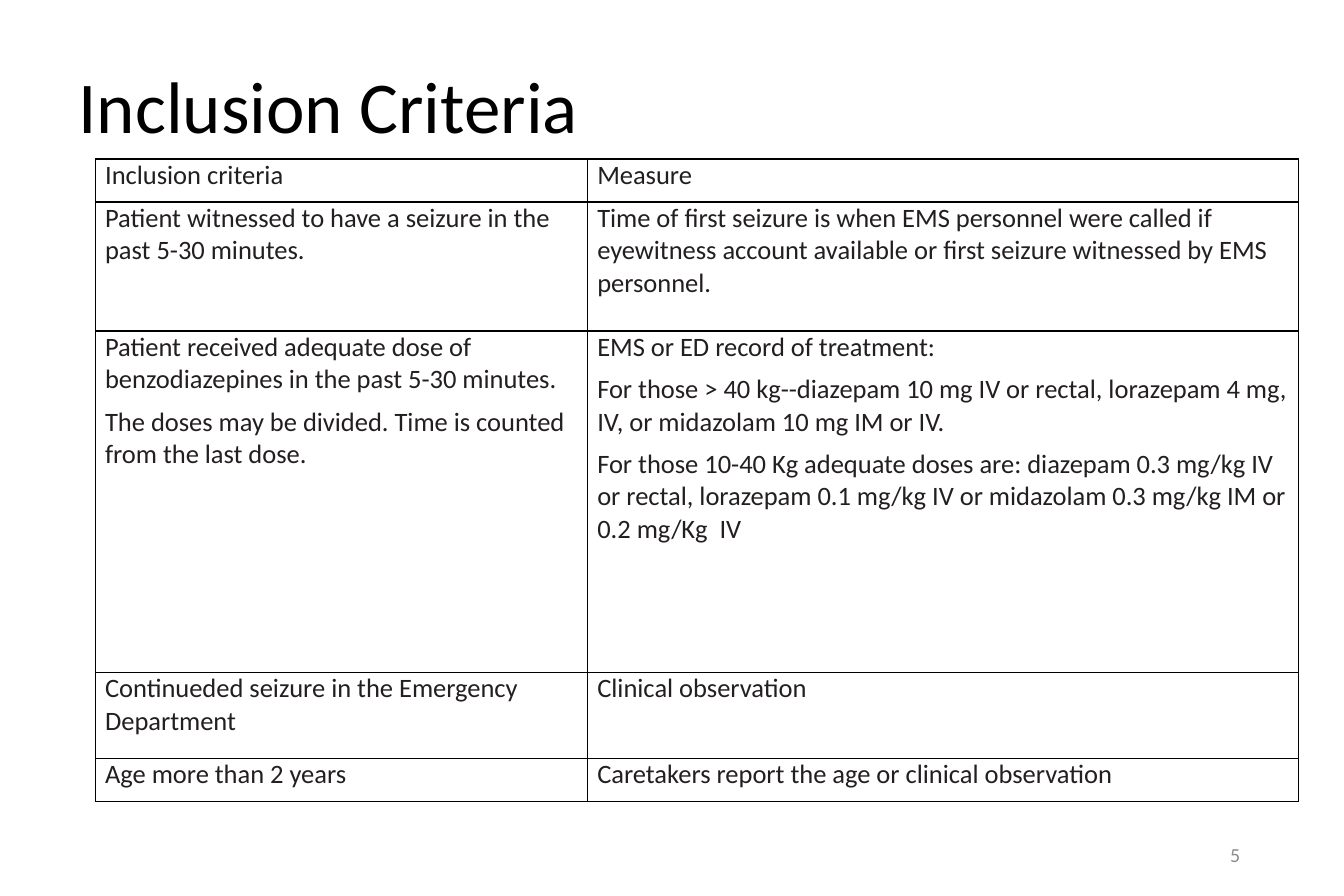
import pptx
import pptx.util
import pptx.dml.color
import pptx.enum.text
import pptx.oxml
import pptx.oxml.ns

Inches = pptx.util.Inches
Pt = pptx.util.Pt
ANCHOR = pptx.enum.text.MSO_ANCHOR
ALIGN = pptx.enum.text.PP_ALIGN

COLORS = {"title": "000000", "body": "231F20", "page": "8C8C8C", "line": "000000"}
COLS = [4.12, 5.95]
ROWS = [
    (0.36, ["Inclusion criteria"], ["Measure"]),
    (1.08,
     ["Patient witnessed to have a seizure in the past 5-30 minutes."],
     ["Time of first seizure is when EMS personnel were called if eyewitness "
      "account available or first seizure witnessed by EMS personnel."]),
    (2.86,
     ["Patient received adequate dose of benzodiazepines in the past 5-30 minutes.",
      "The doses may be divided. Time is counted from the last dose."],
     ["EMS or ED record of treatment:",
      "For those > 40 kg--diazepam 10 mg IV or rectal, lorazepam 4 mg, IV, "
      "or midazolam 10 mg IM or IV.",
      "For those 10-40 Kg adequate doses are: diazepam 0.3 mg/kg IV or rectal, "
      "lorazepam 0.1 mg/kg IV or midazolam 0.3 mg/kg IM or 0.2 mg/Kg  IV"]),
    (0.72, ["Continueded seizure in the Emergency Department"], ["Clinical observation"]),
    (0.36, ["Age more than 2 years"], ["Caretakers report the age or clinical observation"]),
]


def add_run(para, text, size, color):
    run = para.add_run()
    run.text = text
    run.font.name = "Calibri"
    run.font.size = Pt(size)
    run.font.color.rgb = pptx.dml.color.RGBColor.from_string(COLORS[color])


def add_label(slide, box, text, size, color, align):
    frame = slide.shapes.add_textbox(*map(Inches, box)).text_frame
    frame.word_wrap = True
    frame.vertical_anchor = ANCHOR.MIDDLE
    para = frame.paragraphs[0]
    para.alignment = align
    add_run(para, text, size, color)


def add_edges(cell):
    props = cell._tc.get_or_add_tcPr()
    for index, side in enumerate(["lnL", "lnR", "lnT", "lnB"]):
        props.insert(index, pptx.oxml.parse_xml(
            f'<a:{side} {pptx.oxml.ns.nsdecls("a")} w="{Pt(1)}"><a:solidFill>'
            f'<a:srgbClr val="{COLORS["line"]}"/></a:solidFill></a:{side}>'))


def fill_cell(cell, texts):
    cell.margin_left = cell.margin_right = Inches(0.08)
    cell.margin_top = cell.margin_bottom = 0
    cell.fill.background()
    add_edges(cell)
    frame = cell.text_frame
    for index, text in enumerate(texts):
        para = frame.add_paragraph() if index else frame.paragraphs[0]
        para.space_after = Pt(6)
        add_run(para, text, 16, "body")


def add_grid(slide, left, top):
    high = sum(row[0] for row in ROWS)
    box = map(Inches, (left, top, sum(COLS), high))
    table = slide.shapes.add_table(len(ROWS), len(COLS), *box).table
    table.first_row = table.horz_banding = False
    for col, width in zip(table.columns, COLS):
        col.width = Inches(width)
    for r, (height, *cells) in enumerate(ROWS):
        table.rows[r].height = Inches(height)
        for c, texts in enumerate(cells):
            fill_cell(table.cell(r, c), texts)


def main():
    deck = pptx.Presentation()
    deck.slide_width, deck.slide_height = Inches(11.25), Inches(7.5)
    slide = deck.slides.add_slide(deck.slide_layouts[6])
    add_label(slide, (0.56, 0.25, 10.12, 1.25), "Inclusion Criteria", 44, "title", ALIGN.LEFT)
    add_grid(slide, 0.8, 1.33)
    add_label(slide, (7.95, 6.95, 2.53, 0.4), "5", 12, "page", ALIGN.RIGHT)
    deck.save("out.pptx")


if __name__ == "__main__":
    main()
